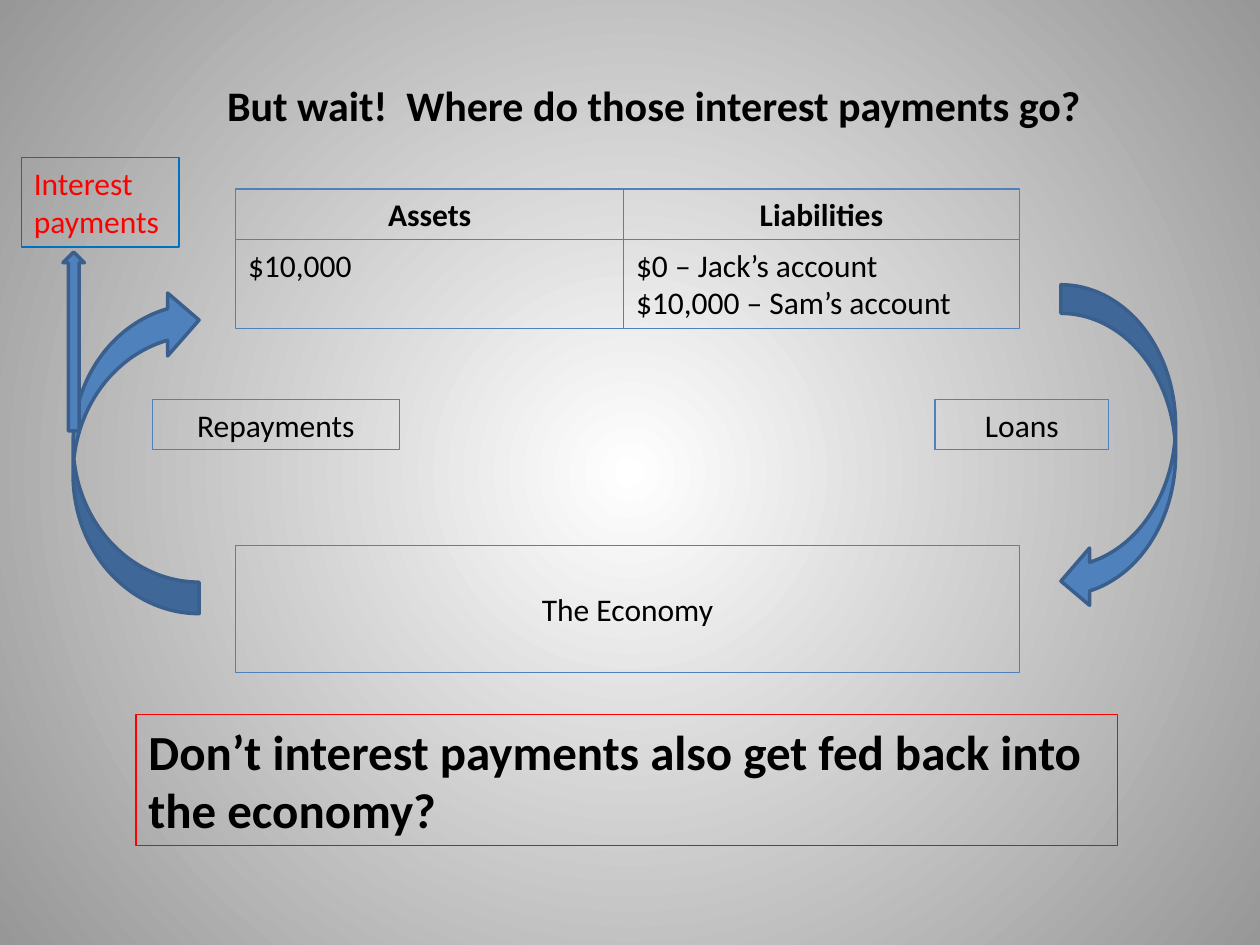
import lxml.etree
import pptx
import pptx.dml.color
import pptx.enum.shapes
import pptx.enum.text
import pptx.oxml.ns
import pptx.util

Inches = pptx.util.Inches
Pt = pptx.util.Pt
RGB = pptx.dml.color.RGBColor
SHAPE = pptx.enum.shapes.MSO_SHAPE
ALIGN = pptx.enum.text.PP_ALIGN
ANCHOR = pptx.enum.text.MSO_ANCHOR
qn = pptx.oxml.ns.qn

BLACK = RGB(0x00, 0x00, 0x00)
WHITE = RGB(0xFF, 0xFF, 0xFF)
GRAY = RGB(0x97, 0x97, 0x97)
BLUE = RGB(0x4F, 0x81, 0xBD)
NAVY = RGB(0x3A, 0x5F, 0x8C)
AZURE = RGB(0x00, 0x70, 0xC0)
RED = RGB(0xFF, 0x00, 0x00)


def set_back(slide):
    """Fill the background with a round gradient, white at the centre."""
    fill = slide.background.fill
    fill.gradient()
    for stop, color, pos in zip(fill.gradient_stops, (WHITE, GRAY), (0, 1)):
        stop.color.rgb = color
        stop.position = pos
    grad = slide.element.find(".//" + qn("a:gradFill"))
    grad.remove(grad.find(qn("a:lin")))
    round_ = lxml.etree.SubElement(grad, qn("a:path"), {"path": "circle"})
    sides = {side: "50000" for side in "ltrb"}
    lxml.etree.SubElement(round_, qn("a:fillToRect"), sides)


def put_text(shape, lines, size=18, bold=False, color=BLACK, align=ALIGN.CENTER):
    frame = shape.text_frame
    frame.word_wrap = True
    frame.vertical_anchor = ANCHOR.MIDDLE
    frame.text = "\n".join(lines)
    for para in frame.paragraphs:
        para.alignment = align
        font = para.font
        font.name, font.size, font.bold = "Calibri", Pt(size), bold
        font.color.rgb = color


def add_shape(slide, kind, box, line, width):
    shape = slide.shapes.add_shape(kind, *map(Inches, box))
    shape.shadow.inherit = False
    shape.line.color.rgb = line
    shape.line.width = Pt(width)
    return shape


def add_box(slide, box, *lines, edge=BLUE, **style):
    shape = add_shape(slide, SHAPE.RECTANGLE, box, edge, 0.75)
    shape.fill.background()
    put_text(shape, lines, **style)


def add_arrow(slide, kind, box, turn=0):
    shape = add_shape(slide, kind, box, NAVY, 2)
    shape.fill.solid()
    shape.fill.fore_color.rgb = BLUE
    shape.rotation = turn


def add_title(slide, box, text):
    title = slide.shapes.title
    title.left, title.top, title.width, title.height = map(Inches, box)
    put_text(title, [text], size=24, bold=True)


def add_sheet(slide, left, top):
    """Draw the bank's balance sheet: a head and a body cell per column."""
    head, body = 0.4, 0.71
    columns = [
        (3.08, "Assets", ["$10,000"]),
        (3.14, "Liabilities", ["$0 – Jack’s account", "$10,000 – Sam’s account"]),
    ]
    for width, name, items in columns:
        add_box(slide, (left, top, width, head), name, bold=True)
        cell = slide.shapes
        add_box(slide, (left, top + head, width, body), *items, align=ALIGN.LEFT)
        cell[-1].text_frame.vertical_anchor = ANCHOR.TOP
        left += width


def add_flows(slide, left, top):
    """Draw the loans, repayments and interest around the sheet."""
    bend = SHAPE.CURVED_LEFT_ARROW
    add_arrow(slide, bend, (left + 8.25, top + 1.01, 0.91, 2.58))
    add_box(slide, (left + 7.25, top + 1.92, 1.38, 0.4), "Loans")
    add_arrow(slide, bend, (left + 0.41, top + 1.04, 1, 2.58), turn=180)
    add_box(slide, (left + 1.04, top + 1.92, 1.96, 0.4), "Repayments")
    add_arrow(slide, SHAPE.UP_ARROW, (left + 0.33, top + 0.75, 0.17, 1.42))
    add_box(slide, (left, top, 1.25, 0.71), "Interest payments",
            edge=AZURE, color=RED, align=ALIGN.LEFT)


def main():
    deck = pptx.Presentation()
    deck.slide_width, deck.slide_height = Inches(10), Inches(7.5)
    slide = deck.slides.add_slide(deck.slide_layouts.get_by_name("Title Only"))
    set_back(slide)
    add_title(slide, (1.21, 0.58, 7.96, 0.5),
              "But wait!  Where do those interest payments go?")
    add_sheet(slide, 1.87, 1.5)
    add_box(slide, (1.87, 4.33, 6.22, 1.01), "The Economy")
    add_flows(slide, 0.17, 1.25)
    add_box(slide, (1.08, 5.67, 7.79, 1.04),
            "Don’t interest payments also get fed back into the economy?",
            edge=RED, size=28, bold=True, align=ALIGN.LEFT)
    deck.save("out.pptx")


if __name__ == "__main__":
    main()
